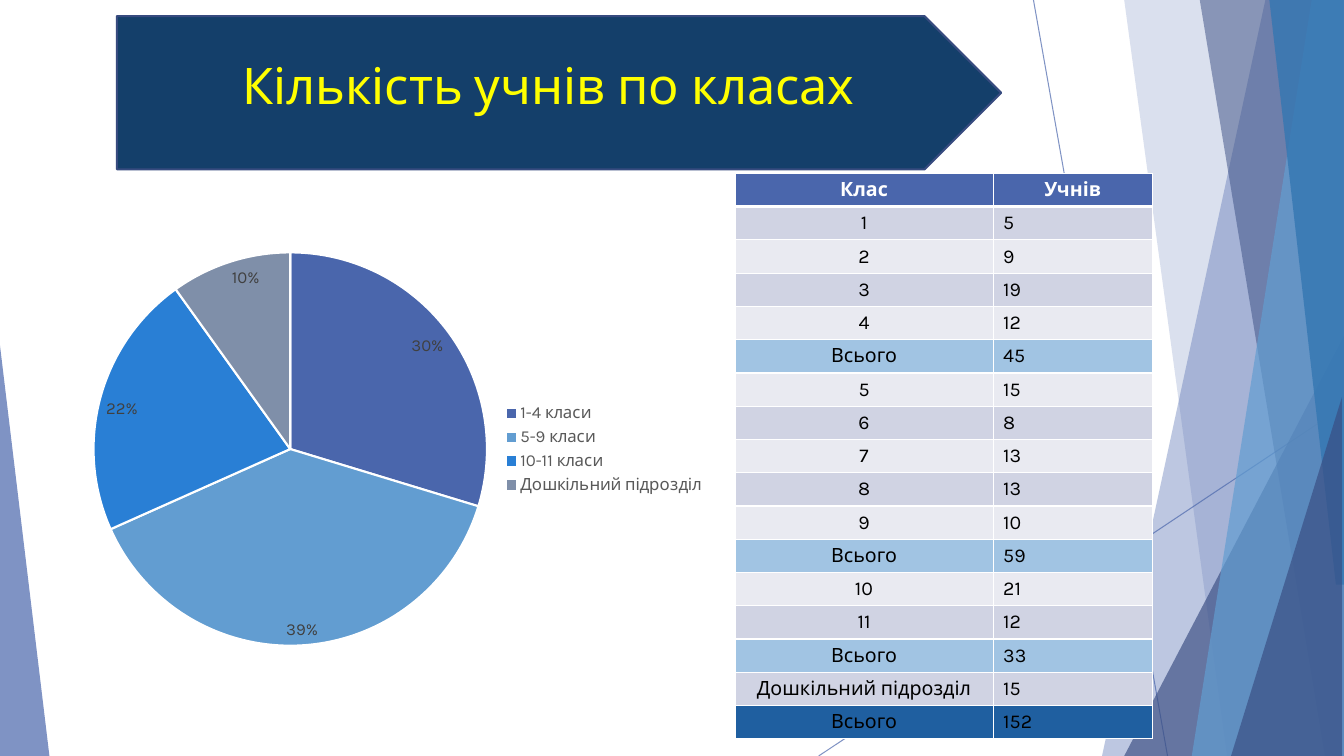
from lxml import etree
from pptx import Presentation
from pptx.chart.data import CategoryChartData
from pptx.dml.color import RGBColor
from pptx.enum.chart import XL_CHART_TYPE, XL_LABEL_POSITION, XL_LEGEND_POSITION
from pptx.enum.shapes import MSO_CONNECTOR, MSO_SHAPE
from pptx.enum.text import MSO_ANCHOR, PP_ALIGN
from pptx.oxml.ns import qn
from pptx.util import Inches, Pt

PIE = XL_CHART_TYPE.PIE
INSIDE = XL_LABEL_POSITION.INSIDE_END
RIGHT = XL_LEGEND_POSITION.RIGHT
LINE = MSO_CONNECTOR.STRAIGHT
TRIANGLE = MSO_SHAPE.ISOSCELES_TRIANGLE
ARROW = MSO_SHAPE.PENTAGON
TOP, MIDDLE = MSO_ANCHOR.TOP, MSO_ANCHOR.MIDDLE
CENTER, LEFT = PP_ALIGN.CENTER, PP_ALIGN.LEFT

COLORS = {
    "white": "FFFFFF", "black": "000000", "yellow": "FFFF00",
    "indigo": "4A66AC", "navy": "384C81", "sky": "629DD1",
    "steel": "3477B2", "azure": "297FD5", "slate": "7F8FA9",
    "banner": "143F6A", "edge": "374B7F", "odd": "D0D3E3",
    "even": "E9EAF1", "sum": "A1C4E3", "total": "1F5FA0",
    "legend": "595959", "label": "404040",
}
SUM = "Всього"
ROWS = [
    ("Клас", "Учнів"), ("1", "5"), ("2", "9"), ("3", "19"), ("4", "12"),
    (SUM, "45"), ("5", "15"), ("6", "8"), ("7", "13"), ("8", "13"),
    ("9", "10"), (SUM, "59"), ("10", "21"), ("11", "12"), (SUM, "33"),
    ("Дошкільний підрозділ", "15"), (SUM, "152"),
]
SLICES = [
    ("1-4 класи", 30, "indigo"), ("5-9 класи", 39, "sky"),
    ("10-11 класи", 22, "azure"), ("Дошкільний підрозділ", 10, "slate"),
]


def rgb(name):
    return RGBColor.from_string(COLORS[name])


class Deck:
    def __init__(self, font):
        self.font = font
        self.prs = Presentation()
        self.prs.slide_width, self.prs.slide_height = Inches(13.33), Inches(7.5)
        self.slide = self.prs.slides.add_slide(self.prs.slide_layouts[6])
        self.shapes = self.slide.shapes

    def style(self, font, size, color, bold=False):
        font.name, font.size, font.bold = self.font, Pt(size), bold
        font.color.rgb = rgb(color)

    def fade(self, shape, alpha):
        for color in shape._element.spPr.iter(qn("a:srgbClr")):
            etree.SubElement(color, qn("a:alpha"), val=str(alpha * 1000))

    def paint(self, shape, color, alpha=100, edge=None):
        shape.shadow.inherit = False
        shape.fill.solid()
        shape.fill.fore_color.rgb = rgb(color)
        if alpha < 100:
            self.fade(shape, alpha)
        if edge:
            shape.line.color.rgb = rgb(edge)
            shape.line.width = Pt(1.5)
        else:
            shape.line.fill.background()

    def line(self, *ends):
        line = self.shapes.add_connector(LINE, *map(Inches, ends))
        line.line.color.rgb = rgb("indigo")
        line.line.width = Pt(0.75)
        self.fade(line, 70)
        etree.SubElement(line._element.spPr, qn("a:effectLst"))

    def band(self, points, color, alpha):
        spots = [(Inches(x), Inches(y)) for x, y in points]
        form = self.shapes.build_freeform(*spots[0])
        form.add_line_segments(spots[1:], close=True)
        self.paint(form.convert_to_shape(), color, alpha)

    def shape(self, kind, box, color, alpha=100, edge=None, tip=None):
        shape = self.shapes.add_shape(kind, *map(Inches, box))
        if tip is not None:
            shape.adjustments[0] = tip
        self.paint(shape, color, alpha, edge)

    def text(self, words, box, size, color):
        frame = self.shapes.add_textbox(*map(Inches, box)).text_frame
        frame.word_wrap = True
        frame.vertical_anchor = TOP
        para = frame.paragraphs[0]
        para.text, para.alignment = words, CENTER
        self.style(para.font, size, color)

    def border(self, cell, top, bottom):
        props = cell._tc.get_or_add_tcPr()
        widths = {"lnL": 1, "lnR": 1, "lnT": top, "lnB": bottom}
        for spot, (side, width) in enumerate(widths.items()):
            edge = etree.Element(qn("a:" + side), w=str(Pt(width)))
            fill = etree.SubElement(edge, qn("a:solidFill"))
            etree.SubElement(fill, qn("a:srgbClr"), val=COLORS["white"])
            props.insert(spot, edge)

    def cell(self, cell, words, fill, color, bold, align):
        cell.fill.solid()
        cell.fill.fore_color.rgb = rgb(fill)
        cell.vertical_anchor = MIDDLE
        cell.margin_top = cell.margin_bottom = Inches(0.02)
        para = cell.text_frame.paragraphs[0]
        para.text, para.alignment = words, align
        self.style(para.font, 14, color, bold)

    def table(self, rows, left, top, widths, height):
        size = (sum(widths), height * len(rows))
        table = self.shapes.add_table(
            len(rows), len(widths), *map(Inches, (left, top, *size))).table
        for col, width in zip(table.columns, widths):
            col.width = Inches(width)
        for r, row in enumerate(rows):
            table.rows[r].height = Inches(height)
            head = r == 0
            if head:
                fill = "indigo"
            elif row[0] == SUM:
                fill = "total" if r == len(rows) - 1 else "sum"
            else:
                fill = "odd" if r % 2 else "even"
            for c, words in enumerate(row):
                cell = table.cell(r, c)
                self.cell(cell, words, fill, "white" if head else "black",
                          head, CENTER if head or c == 0 else LEFT)
                self.border(cell, 3 if r == 1 else 1, 3 if head else 1)

    def pie(self, slices, box):
        data = CategoryChartData()
        data.categories = [name for name, _, _ in slices]
        data.add_series("Series 1", [value for _, value, _ in slices])
        chart = self.shapes.add_chart(PIE, *map(Inches, box), data).chart
        self.style(chart.font, 10, "black")
        chart.has_title = False
        chart.has_legend = True
        chart.legend.position = RIGHT
        chart.legend.include_in_layout = False
        self.style(chart.legend.font, 12, "legend")
        plot = chart.plots[0]
        plot.vary_by_categories = True
        for i, (_, _, color) in enumerate(slices):
            part = plot.series[0].points[i].format
            part.fill.solid()
            part.fill.fore_color.rgb = rgb(color)
            part.line.color.rgb = rgb("white")
            part.line.width = Pt(1.5)
        plot.has_data_labels = True
        labels = plot.data_labels
        labels.show_percentage, labels.show_value = True, False
        labels.number_format, labels.number_format_is_linked = "0%", False
        labels.position = INSIDE
        self.style(labels.font, 12, "label")


def main():
    deck = Deck("Karla")

    # Backdrop of lines and translucent bands
    deck.line(10.25, 0, 11.58, 7.5)
    deck.line(13.33, 4.03, 8.12, 7.5)
    deck.band([(12.55, 0), (13.32, 0), (13.32, 7.5), (10.93, 7.5)], "indigo", 36)
    deck.band([(11.15, 0), (13.33, 0), (13.33, 7.5), (12.17, 7.5)], "indigo", 20)
    deck.shape(TRIANGLE, (11.15, 3.33, 2.18, 4.17), "navy", 66, tip=1)
    deck.band([(11.9, 0), (13.33, 0), (13.33, 7.5), (13.14, 7.5)], "navy", 50)
    deck.band([(13.01, 0), (13.33, 0), (13.33, 7.5), (11.82, 7.5)], "sky", 70)
    deck.band([(12.59, 0), (13.33, 0), (13.33, 5.8), (13.25, 5.8)], "steel", 80)
    deck.shape(TRIANGLE, (12.21, 3.94, 1.1, 3.56), "navy", 66, tip=1)
    deck.shape(TRIANGLE, (0, 3.43, 0.49, 4.07), "indigo", 70, tip=0)

    # Title banner
    deck.shape(ARROW, (1.16, 0.16, 8.77, 1.52), "banner", edge="edge")
    deck.text("Кількість учнів по класах", (2.13, 0.49, 6.62, 1.09), 36, "yellow")

    # Pupils by class
    deck.table(ROWS, 7.29, 1.72, (2.56, 1.58), 0.33)
    deck.pie(SLICES, (0.79, 2.27, 6.31, 4.37))

    deck.prs.save("out.pptx")


if __name__ == "__main__":
    main()
